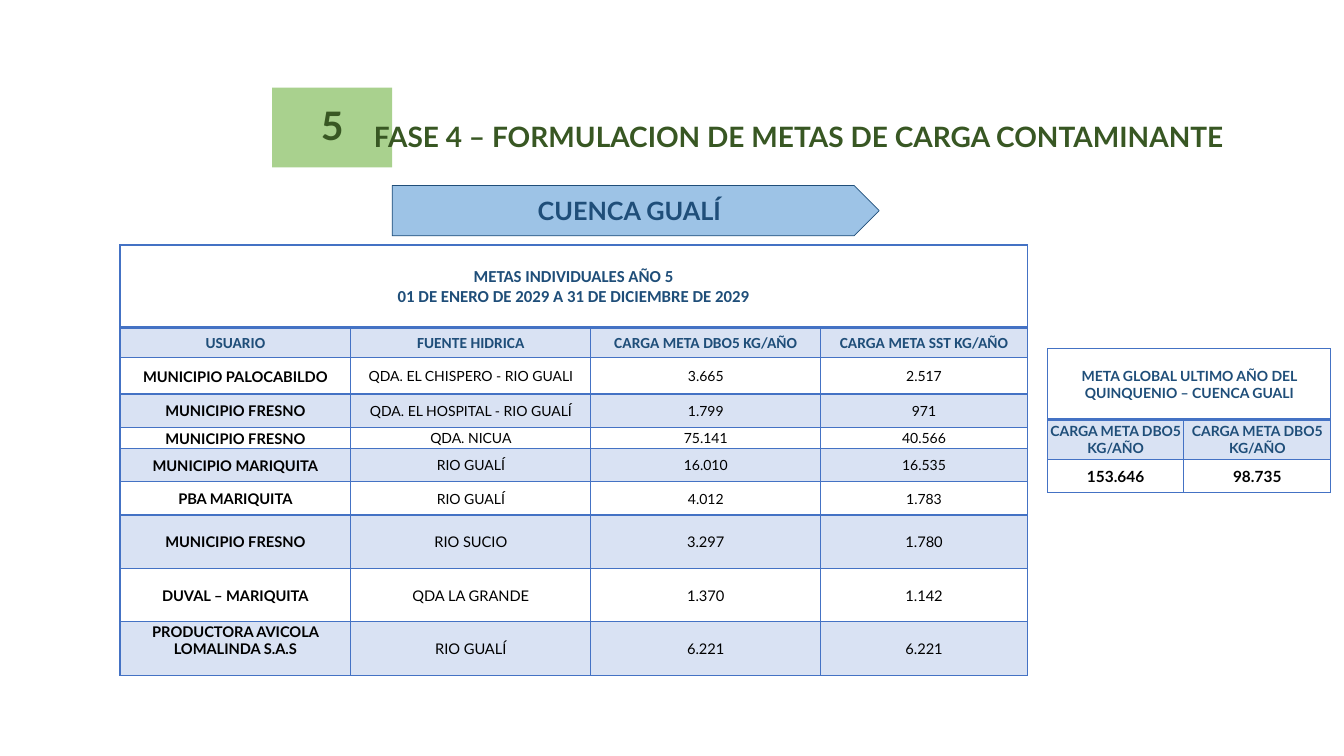
from lxml.etree import SubElement
from pptx import Presentation
from pptx.dml.color import RGBColor
from pptx.enum.shapes import MSO_SHAPE
from pptx.enum.text import MSO_ANCHOR as ANCHOR, PP_ALIGN as ALIGN
from pptx.oxml.ns import qn
from pptx.util import Inches, Pt

DARK_GREEN = RGBColor(0x38, 0x57, 0x23)
GREEN = RGBColor(0xA9, 0xD1, 0x8E)
NAVY = RGBColor(0x1F, 0x4E, 0x79)
SKY = RGBColor(0x9D, 0xC3, 0xE6)
BLUE = RGBColor(0x44, 0x72, 0xC4)
BLACK = RGBColor(0, 0, 0)

USERS = [
    ("MUNICIPIO PALOCABILDO", "QDA. EL CHISPERO - RIO GUALI", "3.665", "2.517"),
    ("MUNICIPIO FRESNO", "QDA. EL HOSPITAL - RIO GUALÍ", "1.799", "971"),
    ("MUNICIPIO FRESNO", "QDA. NICUA", "75.141", "40.566"),
    ("MUNICIPIO MARIQUITA", "RIO GUALÍ", "16.010", "16.535"),
    ("PBA MARIQUITA", "RIO GUALÍ", "4.012", "1.783"),
    ("MUNICIPIO FRESNO", "RIO SUCIO", "3.297", "1.780"),
    ("DUVAL – MARIQUITA", "QDA LA GRANDE", "1.370", "1.142"),
    ("PRODUCTORA AVICOLA LOMALINDA S.A.S", "RIO GUALÍ", "6.221", "6.221"),
]


class SlideBuilder:
    font = "Lato"

    def __init__(self, slide):
        self.s = slide

    def add_text(self, tf, text, size, color, bold=True, font=None, align=ALIGN.CENTER, spacing=None):
        p = tf.paragraphs[0]
        p.alignment = align
        if spacing:
            p.line_spacing = spacing
        for i, line in enumerate(text.split("\n")):
            if i:
                p.add_line_break()
            r = p.add_run()
            r.text = line
            r.font.name = font or self.font
            r.font.size = Pt(size)
            r.font.bold = bold
            r.font.color.rgb = color

    def title(self, text, x, y, w, h):
        sp = self.s.shapes.title
        sp.left, sp.top, sp.width, sp.height = map(Inches, (x, y, w, h))
        sp.fill.solid()
        sp.fill.fore_color.rgb = GREEN
        tf = sp.text_frame
        tf.vertical_anchor = ANCHOR.MIDDLE
        self.add_text(tf, text, 28, DARK_GREEN, spacing=0.9)

    def banner(self, text, x, y, w, h):
        sp = self.s.shapes.add_shape(MSO_SHAPE.PENTAGON, *map(Inches, (x, y, w, h)))
        sp.shadow.inherit = False
        sp.fill.solid()
        sp.fill.fore_color.rgb = SKY
        sp.line.color.rgb = NAVY
        sp.line.width = Pt(0.5)
        sp.text_frame.vertical_anchor = ANCHOR.MIDDLE
        self.add_text(sp.text_frame, text, 18, NAVY)

    def heading(self, text, x, y, w, h):
        tf = self.s.shapes.add_textbox(*map(Inches, (x, y, w, h))).text_frame
        tf.word_wrap = True
        tf.vertical_anchor = ANCHOR.MIDDLE
        self.add_text(tf, text, 20, DARK_GREEN, align=ALIGN.LEFT, spacing=0.9)

    def table(self, x, y, cols, rows):
        """Add an empty table whose first row is one merged cell."""
        tbl = self.s.shapes.add_table(len(rows), len(cols), Inches(x), Inches(y),
                                      Inches(sum(cols)), Inches(sum(rows))).table
        tbl.first_row = tbl.horz_banding = False
        for col, w in zip(tbl.columns, cols):
            col.width = Inches(w)
        for row, h in zip(tbl.rows, rows):
            row.height = Inches(h)
        for i in range(len(rows)):
            for j in range(len(cols)):
                self.style_cell(tbl.cell(i, j), i)
        tbl.cell(0, 0).merge(tbl.cell(0, len(cols) - 1))
        return tbl

    def style_cell(self, cell, row):
        """Odd rows are tinted; the rule under the first row is double width."""
        cell.vertical_anchor = ANCHOR.MIDDLE
        cell.margin_left = cell.margin_right = cell.margin_top = Inches(0.01)
        cell.margin_bottom = 0
        tcPr = cell._tc.get_or_add_tcPr()
        thick = {"lnB": 0, "lnT": 1}
        for side in ("lnL", "lnR", "lnT", "lnB"):
            width = Pt(2 if thick.get(side) == row else 1)
            ln = SubElement(tcPr, qn("a:" + side), w=str(width))
            fill = SubElement(ln, qn("a:solidFill"))
            SubElement(fill, qn("a:srgbClr"), val=str(BLUE))
        if row % 2:
            cell.fill.solid()
            cell.fill.fore_color.rgb = BLUE
            tint = tcPr.find(qn("a:solidFill")).find(qn("a:srgbClr"))
            SubElement(tint, qn("a:alpha"), val="20000")
        else:
            cell.fill.background()

    def cell_text(self, tbl, row, col, text, size, color, **style):
        self.add_text(tbl.cell(row, col).text_frame, text, size, color, **style)


def main():
    prs = Presentation()
    prs.slide_width, prs.slide_height = Inches(13.33), Inches(7.5)
    b = SlideBuilder(prs.slides.add_slide(prs.slide_layouts[5]))

    b.title("5", 2.7, 0.87, 1.19, 0.79)
    b.banner("CUENCA GUALÍ", 3.89, 1.84, 4.83, 0.5)

    total = b.table(10.39, 3.46, [1.35, 1.46], [0.7, 0.4, 0.33])
    b.cell_text(total, 0, 0, "META GLOBAL ULTIMO AÑO DEL QUINQUENIO – CUENCA GUALI", 10, NAVY)
    for j, load in enumerate(("153.646", "98.735")):
        b.cell_text(total, 1, j, "CARGA META DBO5 KG/AÑO", 10, NAVY)
        b.cell_text(total, 2, j, load, 11, BLACK)

    goals = b.table(1.19, 2.43, [2.29, 2.38, 2.28, 2.05],
                    [0.82, 0.3, 0.36, 0.33, 0.21, 0.33, 0.33] + [0.53] * 3)
    b.cell_text(goals, 0, 0, "METAS INDIVIDUALES AÑO 5\n01 DE ENERO DE 2029 A 31 DE DICIEMBRE DE 2029",
                12, NAVY, font="Calibri")
    headers = ("USUARIO", "FUENTE HIDRICA", "CARGA META DBO5 KG/AÑO", "CARGA META SST KG/AÑO")
    for j, header in enumerate(headers):
        b.cell_text(goals, 1, j, header, 11, NAVY, font="Calibri")
    for i, user in enumerate(USERS, start=2):
        for j, text in enumerate(user):
            size = 10.5 if j == 0 or i >= 7 else 10
            b.cell_text(goals, i, j, text, size, BLACK, bold=j == 0)
    goals.cell(len(USERS) + 1, 0).vertical_anchor = ANCHOR.TOP

    b.heading("FASE 4 – FORMULACION DE METAS DE CARGA CONTAMINANTE", 3.61, 1, 9.08, 0.75)
    prs.save("out.pptx")


if __name__ == "__main__":
    main()
